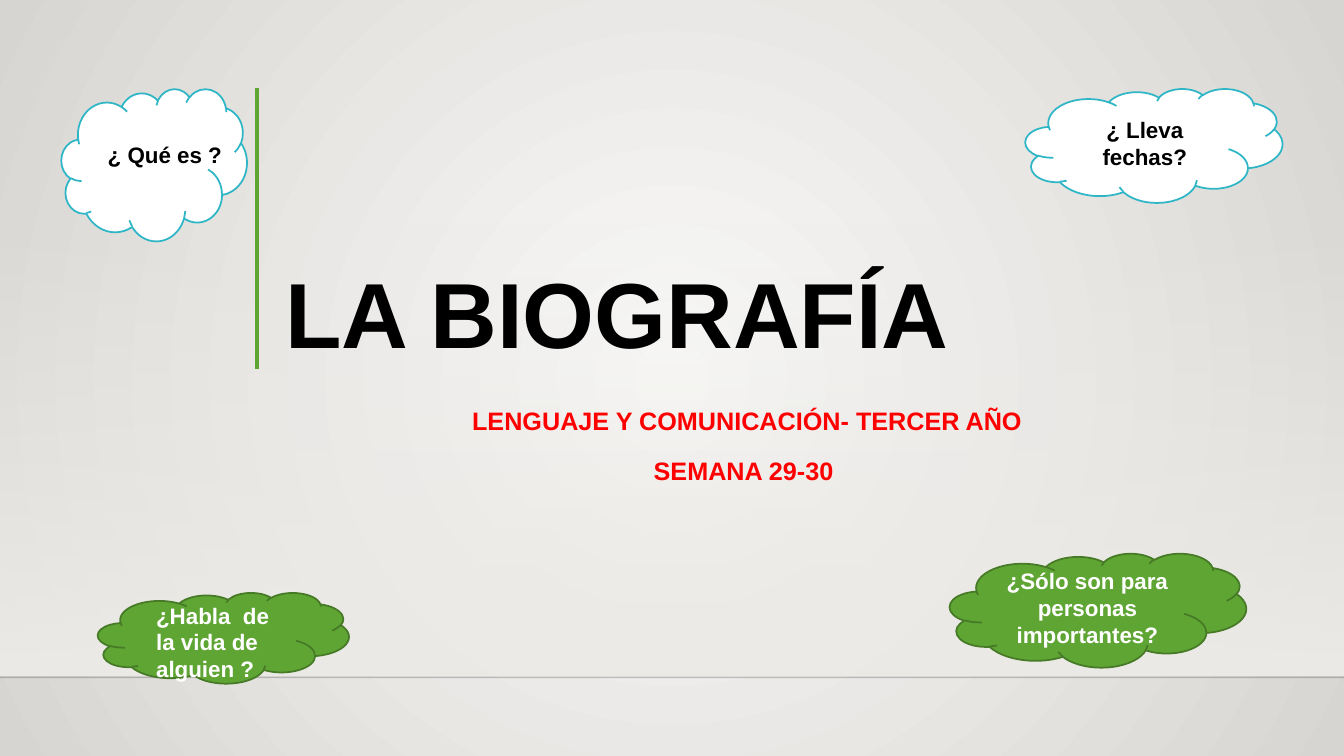
import pptx
import pptx.util
import pptx.dml.color
import pptx.enum.shapes
import pptx.enum.text
import pptx.oxml
import pptx.oxml.ns
from lxml import etree

Inches, Pt = pptx.util.Inches, pptx.util.Pt
ALIGN, ANCHOR = pptx.enum.text.PP_ALIGN, pptx.enum.text.MSO_ANCHOR
SHAPE = pptx.enum.shapes.MSO_SHAPE
qn = pptx.oxml.ns.qn


def tint(code):
    return pptx.dml.color.RGBColor.from_string(code)


def write(shape, lines, size, color, frame, para):
    box = shape.text_frame
    for name, value in {"word_wrap": True, **frame}.items():
        setattr(box, name, value)
    for i, line in enumerate(lines):
        p = box.paragraphs[0] if i == 0 else box.add_paragraph()
        for name, value in para.items():
            if i or name != "space_before":
                setattr(p, name, value)
        run = p.add_run()
        run.text = line
        for name, value in {"name": "Arial", "size": Pt(size), "bold": True}.items():
            setattr(run.font, name, value)
        run.font.color.rgb = tint(color)


deck = pptx.Presentation()
deck.slide_width, deck.slide_height = Inches(13.33), Inches(7.5)
slide = deck.slides.add_slide(deck.slide_layouts[6])
shapes = slide.shapes

# Radial background
back = slide.background.fill
back.gradient()
for stop, code in zip(back.gradient_stops, ("FAFAF9", "D7D5D2")):
    stop.color.rgb = tint(code)
lin = next(slide.background._cSld.iter(qn("a:lin")))
radial = pptx.oxml.parse_xml(
    '<a:path xmlns:a="http://schemas.openxmlformats.org/drawingml/2006/main" path="circle">'
    '<a:fillToRect l="50000" t="50000" r="50000" b="50000"/></a:path>')
lin.getparent().replace(lin, radial)

# Wall that fades in toward the floor
wall = shapes.add_shape(SHAPE.RECTANGLE, 0, Inches(2.2), Inches(13.33), Inches(4.5))
wall.shadow.inherit = False
wall.line.fill.background()
wall.fill.gradient()
wall.fill.gradient_angle = 270
for stop in wall.fill.gradient_stops:
    stop.color.rgb = tint("EDEBE7")
clear = next(wall._element.spPr.iter(qn("a:srgbClr")))
etree.SubElement(clear, qn("a:alpha")).set("val", "0")

# Floor line and title bar
for x1, y1, x2, y2, code, width, alpha in (
    (0, 6.72, 13.33, 6.72, "000001", 1, 20),
    (2.55, 0.87, 2.55, 3.66, "5FA534", 3, 100),
):
    rule = shapes.add_connector(pptx.enum.shapes.MSO_CONNECTOR.STRAIGHT,
                                Inches(x1), Inches(y1), Inches(x2), Inches(y2))
    rule.line.color.rgb = tint(code)
    rule.line.width = Pt(width)
    if alpha < 100:
        ink = next(rule._element.spPr.iter(qn("a:srgbClr")))
        etree.SubElement(ink, qn("a:alpha")).set("val", str(alpha * 1000))
    etree.SubElement(rule._element.spPr, qn("a:effectLst"))

# Title and subtitle
title = shapes.add_textbox(Inches(2.73), Inches(0.88), Inches(9.36), Inches(2.78))
write(title, ["LA BIOGRAFÍA"], 66, "000000",
      {"vertical_anchor": ANCHOR.BOTTOM, "margin_bottom": 0}, {"line_spacing": 0.9})
sub = shapes.add_textbox(Inches(2.73), Inches(3.86), Inches(9.36), Inches(1.07))
write(sub, ["LENGUAJE Y COMUNICACIÓN- TERCER AÑO", "SEMANA 29-30 "], 18, "FF0000",
      {"margin_top": Inches(0.1), "margin_bottom": Inches(0.1)},
      {"alignment": ALIGN.CENTER, "line_spacing": 1.2, "space_before": Pt(10)})

# Question clouds: place, style, text and, if set, the place of its own label
white = ("FFFFFF", "2FB6C6", "000000")
green = ("5FA534", "467A26", "FFFFFF")
clouds = (
    ((0.61, 0.88, 1.84, 1.51), white, "¿ Qué es ?", (0.97, 1.35, 1.35, 0.37)),
    ((9.42, 5.49, 2.94, 1.13), green, "¿Sólo son para personas importantes?", None),
    ((10.17, 0.88, 2.55, 1.13), white, "¿ Lleva fechas?", None),
    ((0.97, 5.88, 2.49, 0.9), green, "¿Habla  de  la vida de alguien ?",
     (1.45, 5.92, 1.49, 0.91)),
)
for place, (fill, edge, ink), text, label in clouds:
    cloud = shapes.add_shape(SHAPE.CLOUD, *map(Inches, place))
    cloud.shadow.inherit = False
    cloud.fill.solid()
    cloud.fill.fore_color.rgb = tint(fill)
    cloud.line.color.rgb = tint(edge)
    cloud.line.width = Pt(1.25)
    if label:
        note = shapes.add_textbox(*map(Inches, label))
        write(note, [text], 16, ink,
              {"auto_size": pptx.enum.text.MSO_AUTO_SIZE.SHAPE_TO_FIT_TEXT}, {})
    else:
        write(cloud, [text], 16, ink, {"vertical_anchor": ANCHOR.MIDDLE},
              {"alignment": ALIGN.CENTER})

deck.save("out.pptx")
